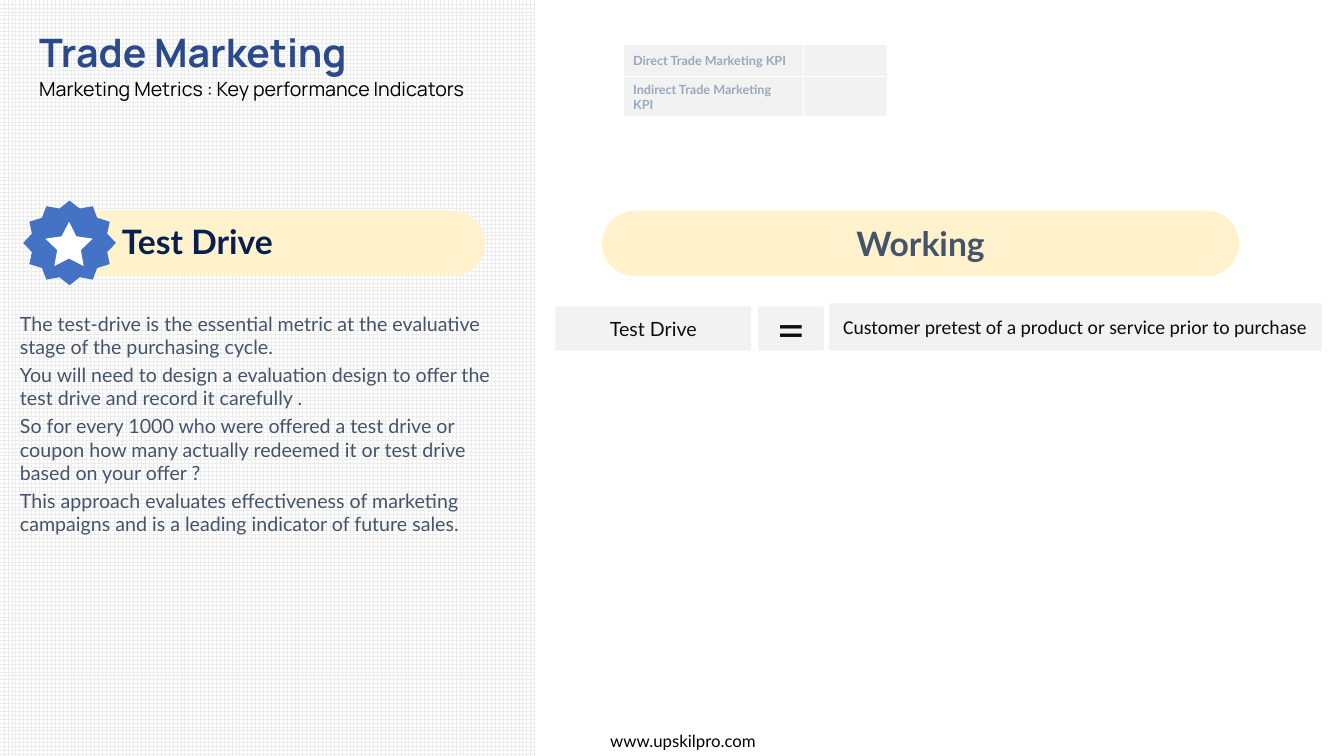
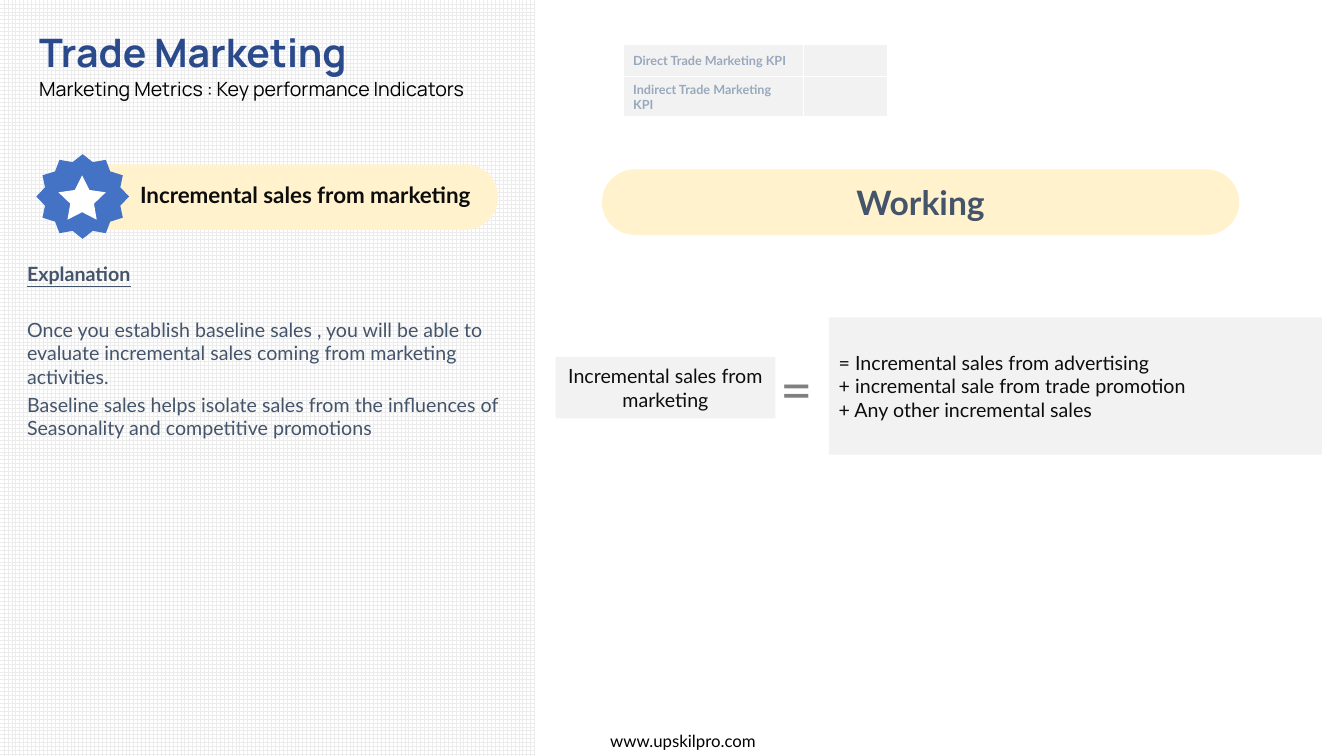
"""Build two trade marketing metric slides, each with an explanation and a formula."""
from dataclasses import dataclass, replace

from pptx import Presentation, util as u
from pptx.dml.color import RGBColor
from pptx.enum import dml, shapes, text

WHITE, GRID, GREY = "FFFFFF", "ECECEC", "F2F2F2"
CREAM, BLUE, NAVY = "FFF2CC", "4472C4", "2A4A8B"
SLATE, INK, BLACK, MUTED = "44546A", "0D0D0D", "000000", "99A8BD"
LEFT, CENTER = text.PP_ALIGN.LEFT, text.PP_ALIGN.CENTER
TOP, MIDDLE = text.MSO_ANCHOR.TOP, text.MSO_ANCHOR.MIDDLE
SHAPE = shapes.MSO_SHAPE

KPI_NAMES = ("Direct Trade Marketing KPI", "Indirect Trade Marketing KPI")


@dataclass(frozen=True)
class Area:
    left: float
    top: float
    width: float
    height: float

    def lengths(self) -> tuple:
        return tuple(u.Inches(n) for n in (self.left, self.top, self.width, self.height))


@dataclass(frozen=True)
class Style:
    size: float = 14
    color: str = INK
    bold: bool = False
    font: str = "Lato"
    align: text.PP_ALIGN = CENTER


@dataclass(frozen=True)
class Term:
    wording: str
    area: Area
    style: Style = Style()
    fill: str = GREY


@dataclass(frozen=True)
class Metric:
    name: str
    name_left: float
    name_style: Style
    pill: Area
    working_top: float
    body: Area
    explanation: tuple[str, ...]
    formula: tuple[Term, ...]
    subheading: str = ""


HEADING = Style(28, NAVY, True, "Manrope", LEFT)
SUBTITLE = replace(HEADING, size=14, color=BLACK, bold=False)
BODY = Style(color=SLATE, align=LEFT)
WORKING = Style(24, SLATE, True)
KPI = Style(9, MUTED, True, align=LEFT)
FOOTER = Style(12, BLACK)

METRICS = (
    Metric(
        "Test Drive", 1.11, Style(24, "08204D", True, align=LEFT),
        Area(0.39, 2.09, 4.42, 0.65), 2.09, Area(0.1, 3.04, 4.94, 2.65),
        (
            "The test-drive is the essential metric at the evaluative stage of the purchasing cycle.",
            "You will need to design a evaluation design to offer the test drive and record it carefully .",
            "So for every 1000 who were offered a test drive or coupon how many actually "
            "redeemed it or test drive based on your offer ?",
            "This approach evaluates effectiveness of marketing campaigns and is a leading "
            "indicator of future sales.",
        ),
        (
            Term("Test Drive", Area(5.51, 3.04, 1.94, 0.44)),
            Term("Customer pretest of a product or service prior to purchase",
                 Area(8.22, 3.01, 4.89, 0.47), Style(font="Calibri")),
            Term("=", Area(7.52, 3.04, 0.65, 0.44), Style(36)),
        ),
    ),
    Metric(
        "Incremental sales from marketing", 1.29, Style(16, INK, True, align=LEFT),
        Area(0.52, 1.63, 4.42, 0.65), 1.68, Area(0.17, 2.55, 5.14, 1.9),
        (
            "Once you establish baseline sales , you will be able to evaluate incremental "
            "sales coming from marketing activities.",
            "Baseline sales helps isolate sales from the influences of Seasonality and "
            "competitive promotions",
        ),
        (
            Term("=", Area(7.58, 3.68, 0.65, 0.35), Style(40, "808080"), WHITE),
            Term("Incremental sales from marketing", Area(5.51, 3.54, 2.18, 0.61)),
            Term("= Incremental sales from advertising\n"
                 "+ incremental sale from trade promotion\n"
                 "+ Any other incremental sales",
                 Area(8.22, 3.15, 4.89, 1.36), Style(align=LEFT)),
        ),
        "Explanation",
    ),
)


def paint(color_format, color: str) -> None:
    """Set a colour format from a hex string."""
    color_format.rgb = RGBColor.from_string(color)


def format_paragraph(paragraph, style: Style) -> None:
    """Apply a style to a paragraph and its runs."""
    paragraph.alignment = style.align
    for run in paragraph.runs:
        run.font.size = u.Pt(style.size)
        run.font.name = style.font
        run.font.bold = style.bold
        paint(run.font.color, style.color)


def write(frame, wording: str, style: Style, anchor=MIDDLE) -> None:
    """Fill a text frame with wording in one style."""
    frame.word_wrap = True
    frame.vertical_anchor = anchor
    frame.text = wording
    for paragraph in frame.paragraphs:
        format_paragraph(paragraph, style)


def add_text(slide, area: Area, wording: str, style: Style, anchor=TOP):
    """Add a wrapped text box and return its frame."""
    frame = slide.shapes.add_textbox(*area.lengths()).text_frame
    write(frame, wording, style, anchor)
    return frame


def add_block(slide, area: Area, fill: str, preset=SHAPE.RECTANGLE, adjust=None):
    """Add a preset shape with a plain fill and no outline."""
    block = slide.shapes.add_shape(preset, *area.lengths())
    block.shadow.inherit = False
    block.line.fill.background()
    block.fill.solid()
    paint(block.fill.fore_color, fill)
    if adjust is not None:
        block.adjustments[0] = adjust
    return block


def add_grid_panel(slide) -> None:
    """Draw the left panel with its fine grid."""
    fill = add_block(slide, Area(0, 0, 5.31, 7.5), WHITE).fill
    fill.patterned()
    fill.pattern = dml.MSO_PATTERN.LARGE_GRID
    paint(fill.fore_color, GRID)
    paint(fill.back_color, WHITE)


def add_kpi_table(slide) -> None:
    """Draw the table of KPI kinds."""
    table = slide.shapes.add_table(2, 2, *Area(6.18, 0.44, 2.62, 0.64).lengths()).table
    for column, width in zip(table.columns, (1.79, 0.83)):
        column.width = u.Inches(width)
    for row, kpi_name in enumerate(KPI_NAMES):
        named, empty = table.cell(row, 0), table.cell(row, 1)
        for cell in (named, empty):
            cell.fill.solid()
            paint(cell.fill.fore_color, GREY)
            cell.vertical_anchor = MIDDLE
        write(named.text_frame, kpi_name, KPI)
        empty.margin_top = empty.margin_bottom = 0


def add_frame(slide) -> None:
    """Draw the title, footer and table that every slide carries."""
    title = add_text(slide, Area(0.29, 0.23, 8.7, 0.82), "Trade Marketing", HEADING)
    subtitle = title.add_paragraph()
    subtitle.text = "Marketing Metrics : Key performance Indicators"
    subtitle.line_spacing = 1.07
    format_paragraph(subtitle, SUBTITLE)
    add_text(slide, Area(5.4, 7.2, 2.75, 0.3), "www.upskilpro.com", FOOTER)
    add_kpi_table(slide)


def add_name(slide, metric: Metric) -> None:
    """Draw the metric name on its pill with the star badge."""
    pill = metric.pill
    add_block(slide, pill, CREAM, SHAPE.ROUNDED_RECTANGLE, 0.5)
    badge = Area(pill.left - 0.16, pill.top - 0.1, 0.92, 0.84)
    star = Area(pill.left + 0.06, pill.top + 0.11, 0.47, 0.44)
    add_block(slide, badge, BLUE, SHAPE.STAR_12_POINT, 0.42)
    add_block(slide, star, WHITE, SHAPE.STAR_5_POINT, 0.25)
    name_area = Area(metric.name_left, pill.top + 0.05, 3.55, 0.5)
    add_text(slide, name_area, metric.name, metric.name_style, MIDDLE)


def add_explanation(slide, metric: Metric) -> None:
    """Write the explanation, under its subheading if it has one."""
    lines = ([metric.subheading] if metric.subheading else []) + list(metric.explanation)
    paragraphs = add_text(slide, metric.body, "\n".join(lines), BODY).paragraphs
    for paragraph in paragraphs[1:]:
        paragraph.space_before = u.Pt(3)
    if metric.subheading:
        subheading = paragraphs[0].runs[0].font
        subheading.bold = subheading.underline = True
        paragraphs[1].space_before = u.Pt(23)


def add_metric(slide, metric: Metric) -> None:
    """Draw one metric slide."""
    add_grid_panel(slide)
    add_explanation(slide, metric)
    working = add_block(slide, Area(5.97, metric.working_top, 6.32, 0.65), CREAM,
                        SHAPE.ROUNDED_RECTANGLE, 0.5)
    write(working.text_frame, "Working", WORKING)
    add_name(slide, metric)
    for term in metric.formula:
        block = add_block(slide, term.area, term.fill)
        write(block.text_frame, term.wording, term.style)
    add_frame(slide)


def main() -> None:
    """Build and save the presentation."""
    deck = Presentation()
    deck.slide_width, deck.slide_height = u.Inches(13.33), u.Inches(7.5)
    for metric in METRICS:
        add_metric(deck.slides.add_slide(deck.slide_layouts[6]), metric)
    deck.save("out.pptx")


if __name__ == "__main__":
    main()
